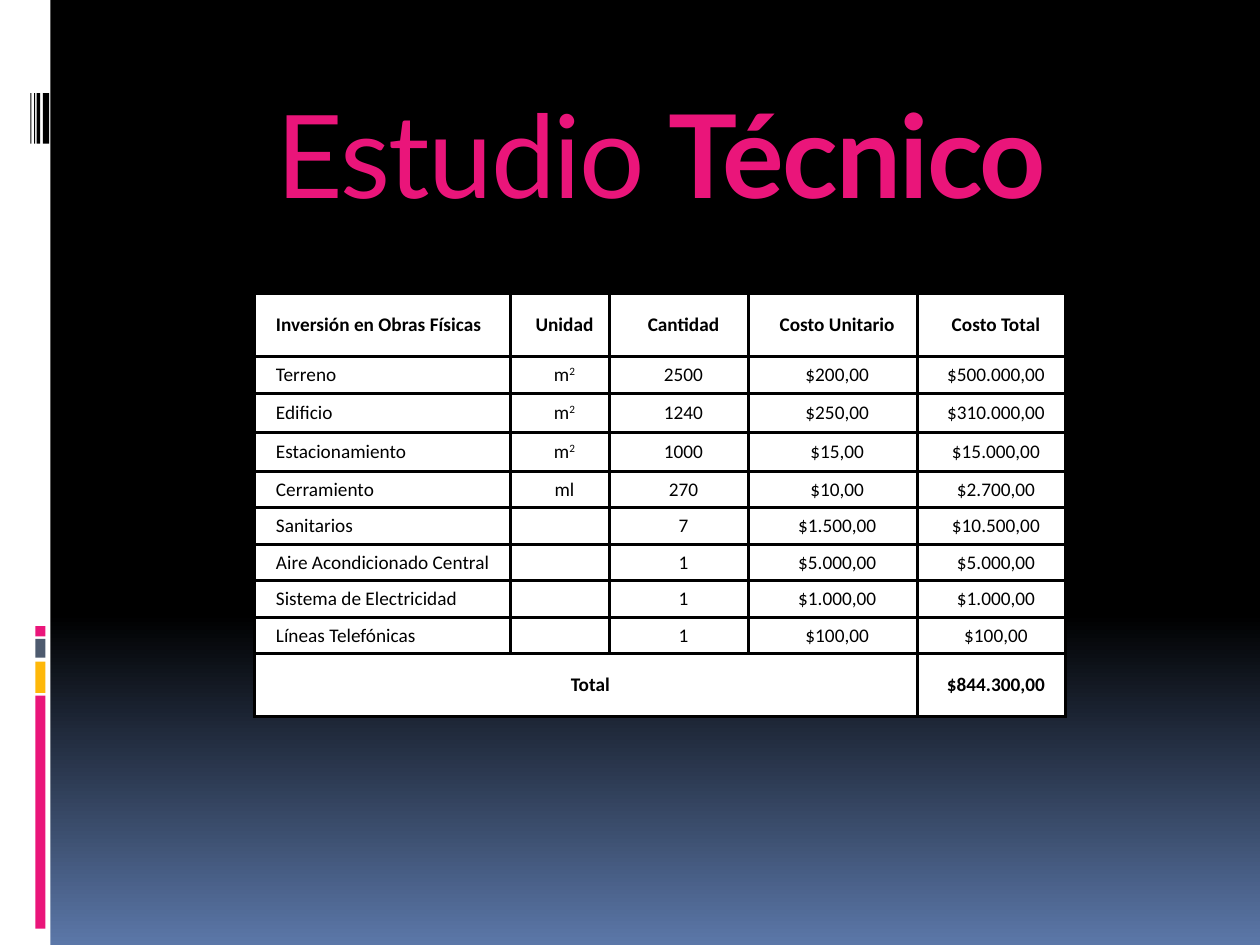
from lxml import etree
from pptx import Presentation
from pptx.dml.color import RGBColor
from pptx.enum.shapes import MSO_SHAPE
from pptx.enum.text import MSO_ANCHOR, PP_ALIGN
from pptx.oxml.ns import qn
from pptx.util import Inches, Pt

RECTANGLE = MSO_SHAPE.RECTANGLE
MIDDLE = MSO_ANCHOR.MIDDLE
LEFT, CENTER = PP_ALIGN.LEFT, PP_ALIGN.CENTER
BLACK = RGBColor(0x00, 0x00, 0x00)
WHITE = RGBColor(0xFF, 0xFF, 0xFF)
PINK = RGBColor(0xEA, 0x15, 0x7A)
AMBER = RGBColor(0xFE, 0xB8, 0x0A)
SLATE = RGBColor(0x4E, 0x5B, 0x6F)
BLUE = RGBColor(0x5B, 0x77, 0xA8)

GRID_COLUMNS, GRID_ROWS = 100, 75
UNIT = Inches(0.1)

SIDE_BAND = (0, 0, 4, GRID_ROWS)
ACCENT_COLUMN, ACCENT_WIDTH = 2.8, 0.8
ACCENTS = [(55.2, 18.5, PINK), (52.5, 2.5, AMBER), (50.7, 1.5, SLATE), (49.7, 0.8, PINK)]
BARCODE_ROW, BARCODE_HEIGHT = 7.4, 4
BARCODE = [(3.4, 0.5), (2.9, 0.3), (2.7, 0.1), (2.4, 0.1)]

TITLE_AREA = (10, 5.6, 85, 13)
TITLE_FORMAT = {"name": "Lato", "size": Pt(66), "bold": False}
TITLE = [
    ("Estudio", {}),
    (" ", {"size": Pt(54), "bold": True}),
    ("Técnico", {"bold": True}),
]

TABLE_CORNER = (20.2, 23.3)
COLUMN_WIDTHS = [20.3, 7.9, 11, 13.4, 11.8]
TALL, NORMAL, RAISED = 5, 2.9, 3.1
CELL_FORMAT = {"name": "Calibri", "size": Pt(11)}
SQUARE_METRE = "m²"
COSTS = [
    ("Inversión en Obras Físicas", "Unidad", "Cantidad", "Costo Unitario", "Costo Total"),
    ("Terreno", SQUARE_METRE, "2500", "$200,00", "$500.000,00"),
    ("Edificio", SQUARE_METRE, "1240", "$250,00", "$310.000,00"),
    ("Estacionamiento", SQUARE_METRE, "1000", "$15,00", "$15.000,00"),
    ("Cerramiento", "ml", "270", "$10,00", "$2.700,00"),
    ("Sanitarios", "", "7", "$1.500,00", "$10.500,00"),
    ("Aire Acondicionado Central", "", "1", "$5.000,00", "$5.000,00"),
    ("Sistema de Electricidad", "", "1", "$1.000,00", "$1.000,00"),
    ("Líneas Telefónicas", "", "1", "$100,00", "$100,00"),
    ("Total", "", "", "", "$844.300,00"),
]
ROW_HEIGHTS = [TALL, NORMAL, RAISED, RAISED] + [NORMAL] * 5 + [TALL]


def grid(*cells):
    """Turn grid columns and rows into slide lengths."""
    return [round(cell * UNIT) for cell in cells]


def paint_background(page):
    """Fade the page from black to blue over its lower third."""
    fill = page.background.fill
    fill.gradient()
    fill.gradient_angle = 270
    for stop, position, color in zip(fill.gradient_stops, (0.65, 1), (BLACK, BLUE)):
        stop.position = position
        stop.color.rgb = color


def add_block(page, area, color):
    """Add a plain rectangle without outline."""
    block = page.shapes.add_shape(RECTANGLE, *grid(*area))
    block.shadow.inherit = False
    block.fill.solid()
    block.fill.fore_color.rgb = color
    block.line.fill.background()


def add_span(para, text, color, values):
    """Add a run formatted from a dict of font values."""
    span = para.add_run()
    span.text = text
    for name, value in values.items():
        setattr(span.font, name, value)
    span.font.color.rgb = color
    return span.font._element


def add_title(page):
    """Add the centred two-weight title."""
    box = page.shapes.add_textbox(*grid(*TITLE_AREA))
    box.text_frame.word_wrap = True
    box.text_frame.vertical_anchor = MIDDLE
    para = box.text_frame.paragraphs[0]
    para.alignment = CENTER
    for text, changes in TITLE:
        add_span(para, text, PINK, TITLE_FORMAT | changes).set("spc", "-100")


def frame_cell(cell):
    """Give a cell black borders and a white fill."""
    properties = cell._tc.get_or_add_tcPr()
    for side in ("a:lnL", "a:lnR", "a:lnT", "a:lnB"):
        line = etree.SubElement(properties, qn(side), w=str(Pt(2)))
        fill = etree.SubElement(line, qn("a:solidFill"))
        etree.SubElement(fill, qn("a:srgbClr"), val=str(BLACK))
    cell.fill.solid()
    cell.fill.fore_color.rgb = WHITE


def write_cell(cell, text, alignment, bold):
    """Write one cell with a hanging indent and raised exponents."""
    cell.vertical_anchor = MIDDLE
    para = cell.text_frame.paragraphs[0]
    para.alignment = alignment
    indents = para._p.get_or_add_pPr()
    indents.set("marL", str(Inches(0.45)))
    indents.set("indent", str(Inches(-0.38)))
    values = CELL_FORMAT | {"bold": bold}
    base, exponent, _ = text.partition("²")
    if base:
        add_span(para, base, BLACK, values)
    else:
        etree.SubElement(para._p, qn("a:endParaRPr"), sz="1100")
    if exponent:
        add_span(para, "2", BLACK, values).set("baseline", "30000")


def add_cost_table(page):
    """Add the investment table with its merged total row."""
    size = (sum(COLUMN_WIDTHS), sum(ROW_HEIGHTS))
    frame = page.shapes.add_table(len(COSTS), len(COLUMN_WIDTHS), *grid(*TABLE_CORNER, *size))
    table = frame.table
    for column, width in zip(table.columns, grid(*COLUMN_WIDTHS)):
        column.width = width
    for row, height in zip(table.rows, grid(*ROW_HEIGHTS)):
        row.height = height
    last = len(COSTS) - 1
    for row_index, texts in enumerate(COSTS):
        for column_index, text in enumerate(texts):
            cell = table.cell(row_index, column_index)
            is_label = column_index == 0 and row_index < last
            frame_cell(cell)
            write_cell(cell, text, LEFT if is_label else CENTER, row_index in (0, last))
    table.cell(last, 0).merge(table.cell(last, 3))


def main():
    """Build the slide and save the deck."""
    deck = Presentation()
    deck.slide_width, deck.slide_height = grid(GRID_COLUMNS, GRID_ROWS)
    page = deck.slides.add_slide(deck.slide_layouts[6])
    paint_background(page)
    add_block(page, SIDE_BAND, WHITE)
    for top, height, color in ACCENTS:
        add_block(page, (ACCENT_COLUMN, top, ACCENT_WIDTH, height), color)
    for left, width in BARCODE:
        add_block(page, (left, BARCODE_ROW, width, BARCODE_HEIGHT), BLACK)
    add_title(page)
    add_cost_table(page)
    deck.save("out.pptx")


if __name__ == "__main__":
    main()
